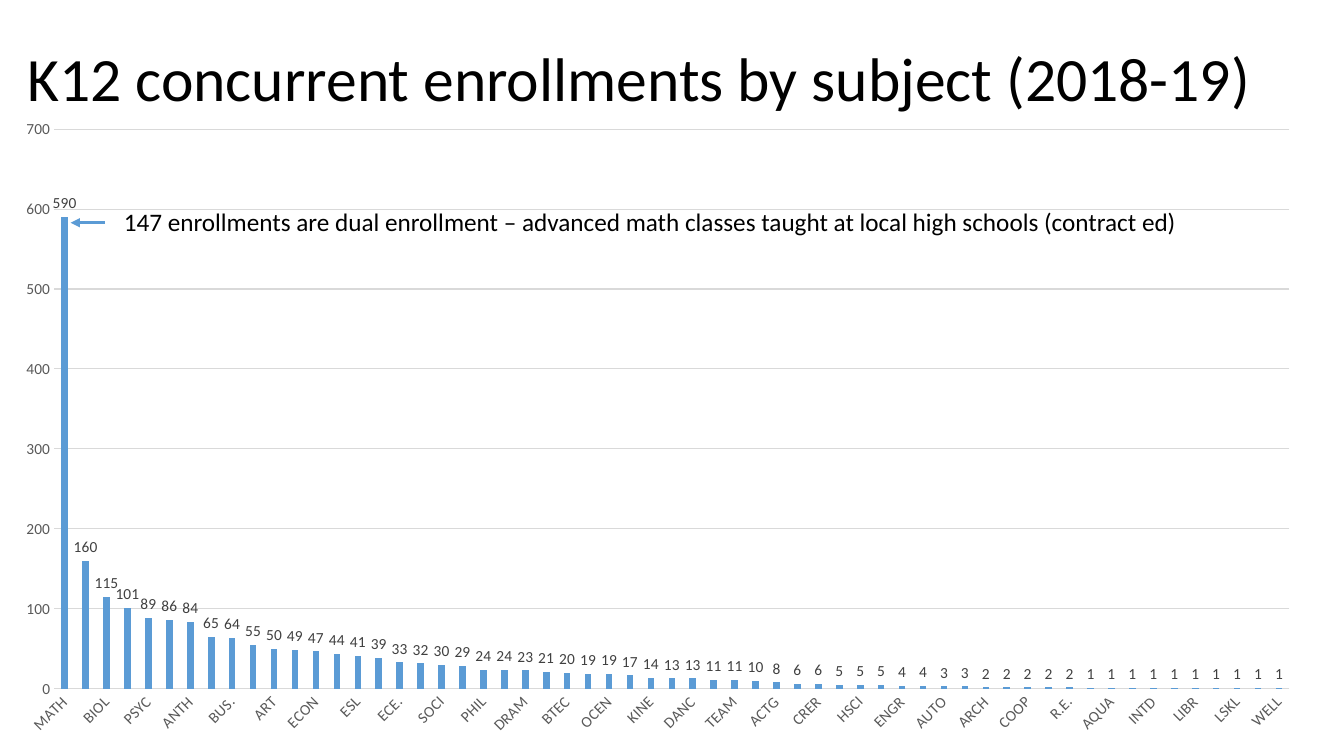
"""Builds a slide with a column chart of K12 concurrent enrollments by subject."""
from typing import NamedTuple

from lxml.etree import SubElement
from pptx import Presentation
from pptx.chart.data import CategoryChartData
from pptx.dml.color import RGBColor
from pptx.enum.chart import XL_CHART_TYPE as Kind, XL_LABEL_POSITION as Spot, XL_TICK_MARK as Tick
from pptx.enum.shapes import MSO_CONNECTOR as Link
from pptx.enum.text import MSO_ANCHOR as Anchor, MSO_AUTO_SIZE as Fit
from pptx.oxml.ns import qn
from pptx.util import Inches, Pt


class Face(NamedTuple):
    size: float
    color: str


class Box(NamedTuple):
    left: float
    top: float
    width: float
    height: float


BLUE, GRID = "5B9BD5", "D9D9D9"
HEAD, NOTE = Face(44, "000000"), Face(18, "000000")
AXIS, MARK = Face(11, "595959"), Face(11, "404040")

CODES = """MATH ENGL BIOL FITN PSYC CIS ANTH CHEM BUS. PLSC ART MUS. ECON SPAN ESL
HIST ECE. ASTR SOCI MART PHIL PHYS DRAM COMM BTEC FASH OCEN LIT. KINE CHIN DANC ENVS
TEAM GEOG ACTG ASL CRER DGME HSCI LCTR ENGR METE AUTO COUN ARCH CBOT COOP MEDA R.E.
ADMJ AQUA ETHN INTD LEGL LIBR LING LSKL MGMT WELL""".split()
COUNTS = [590, 160, 115, 101, 89, 86, 84, 65, 64, 55, 50, 49, 47, 44, 41, 39, 33, 32, 30,
          29, 24, 24, 23, 21, 20, 19, 19, 17, 14, 13, 13, 11, 11, 10, 8, 6, 6, 5, 5, 5,
          4, 4, 3, 3] + [2] * 5 + [1] * 10


def tint(code: str) -> RGBColor:
    return RGBColor.from_string(code)


def style(font, face: Face) -> None:
    font.name = "Calibri"
    font.size = Pt(face.size)
    font.color.rgb = tint(face.color)


def stroke(line, code: str, width: float) -> None:
    line.color.rgb = tint(code)
    line.width = Pt(width)


def place(shape, box: Box) -> None:
    shape.left, shape.top, shape.width, shape.height = map(Inches, box)


def write(frame, text: str, face: Face) -> None:
    frame.text = text
    style(frame.paragraphs[0].runs[0].font, face)


def add_title(slide) -> None:
    title = slide.shapes.title
    place(title, Box(0.17, 0.08, 12.78, 1.45))
    frame = title.text_frame
    write(frame, "K12 concurrent enrollments by subject (2018-19)", HEAD)
    frame.vertical_anchor = Anchor.MIDDLE
    frame.auto_size = Fit.NONE
    frame.paragraphs[0].line_spacing = 0.9
    frame.paragraphs[0].alignment = 1


def add_bars(slide) -> None:
    data = CategoryChartData()
    data.categories = CODES
    data.add_series("Series 1", COUNTS)
    box = map(Inches, Box(0, 1.06, 13.05, 6.36))
    chart = slide.shapes.add_chart(Kind.COLUMN_CLUSTERED, *box, data).chart
    chart.has_legend = chart.has_title = False
    style(chart.font, Face(11, "000000"))

    for axis in (chart.category_axis, chart.value_axis):
        axis.major_tick_mark = axis.minor_tick_mark = Tick.NONE
        style(axis.tick_labels.font, AXIS)
    base, scale = chart.category_axis, chart.value_axis
    stroke(base.format.line, GRID, 0.75)
    base._element.find(qn("c:txPr")).find(qn("a:bodyPr")).set("rot", "-2700000")
    scale.format.line.fill.background()
    scale.minimum_scale, scale.maximum_scale, scale.major_unit = 0, 700, 100
    stroke(scale.major_gridlines.format.line, GRID, 0.75)

    plot = chart.plots[0]
    plot.gap_width, plot.overlap, plot.vary_by_categories = 219, -27, False
    bars = plot.series[0]
    bars.format.fill.solid()
    bars.format.fill.fore_color.rgb = tint(BLUE)
    labels = bars.data_labels
    labels.show_value = True
    labels.position = Spot.OUTSIDE_END
    style(labels.font, MARK)


def add_note(slide) -> None:
    box = map(Inches, Box(1.13, 2, 10.69, 0.4))
    frame = slide.shapes.add_textbox(*box).text_frame
    write(frame, "147 enrollments are dual enrollment – advanced math classes "
          "taught at local high schools (contract ed)", NOTE)
    frame.word_wrap = False
    frame.auto_size = Fit.SHAPE_TO_FIT_TEXT

    ends = map(Inches, (0.7, 2.21, 1.04, 2.21))
    arrow = slide.shapes.add_connector(Link.STRAIGHT, *ends)
    stroke(arrow.line, BLUE, 2.25)
    SubElement(arrow.line._get_or_add_ln(), qn("a:headEnd"), type="triangle")
    SubElement(arrow._element.spPr, qn("a:effectLst"))


def main() -> None:
    deck = Presentation()
    deck.slide_width, deck.slide_height = Inches(13.33), Inches(7.5)
    slide = deck.slides.add_slide(deck.slide_layouts[5])
    add_title(slide)
    add_bars(slide)
    add_note(slide)
    deck.save("out.pptx")


if __name__ == "__main__":
    main()
